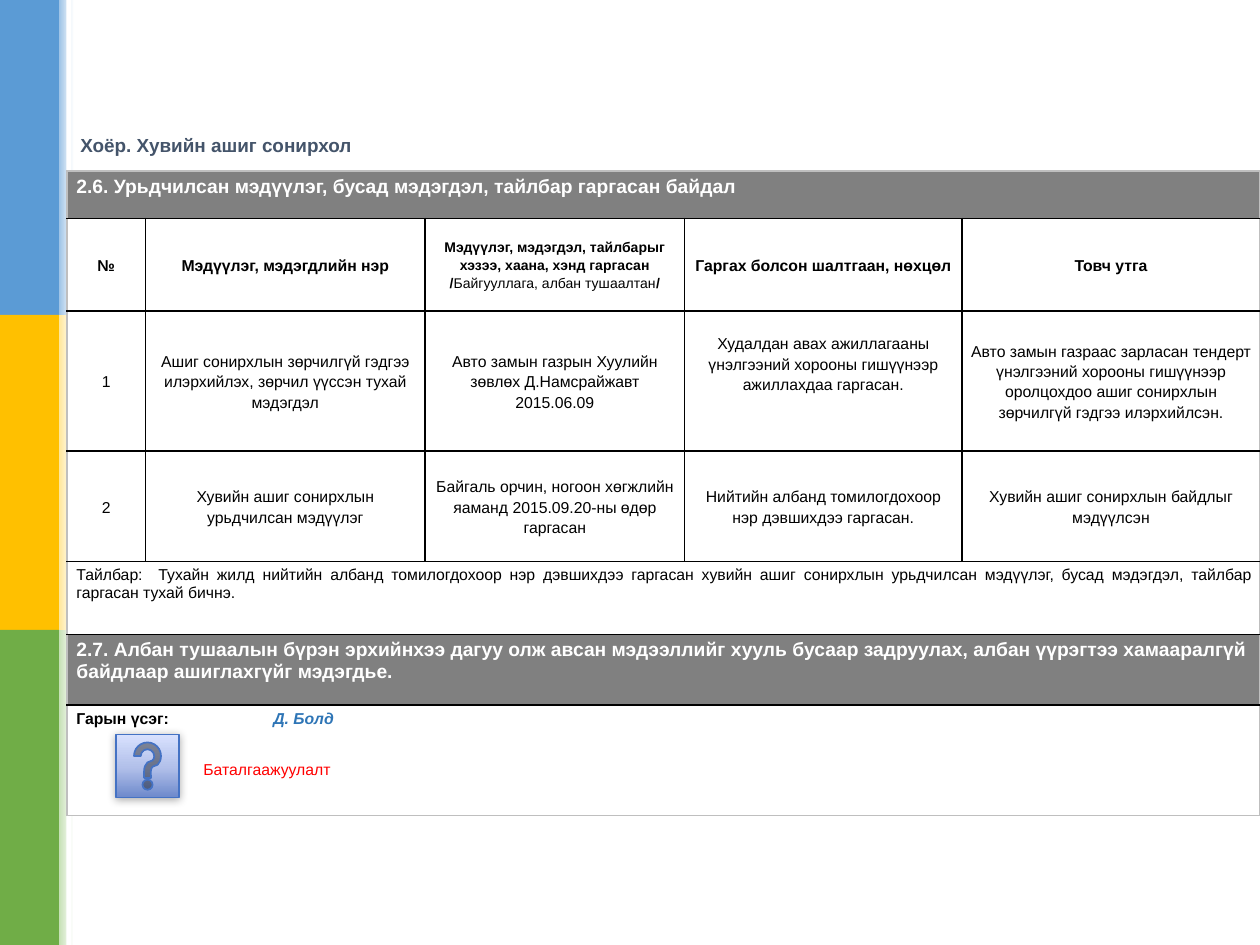
import copy

import pptx
import pptx.dml.color
import pptx.enum.shapes
import pptx.enum.text
import pptx.oxml
import pptx.oxml.ns
import pptx.util
from pptx.util import Cm

SHAPES = pptx.enum.shapes.MSO_SHAPE
ALIGN = pptx.enum.text.PP_ALIGN
ANCHOR = pptx.enum.text.MSO_ANCHOR
NAMESPACE = pptx.oxml.ns.nsdecls("a")

BANDS = [("5B9BD5", "9DC3E6"), ("FFC000", "FFE699"), ("70AD47", "C5E0B4")]
COLUMNS = [1.58, 5.64, 5.23, 5.59, 6.01]
ROWS = [0.95, 1.87, 2.82, 2.23, 1.47, 1.42, 2.23]
HEADINGS = {
    0: "2.6. Урьдчилсан мэдүүлэг, бусад мэдэгдэл, тайлбар гаргасан байдал",
    5: "2.7. Албан тушаалын бүрэн эрхийнхээ дагуу олж авсан мэдээллийг хууль бусаар "
       "задруулах, албан үүрэгтээ хамааралгүй байдлаар ашиглахгүйг мэдэгдье.",
}
NOTE = ("Тайлбар:  Тухайн жилд нийтийн албанд томилогдохоор нэр дэвшихдээ гаргасан хувийн "
        "ашиг сонирхлын урьдчилсан мэдүүлэг, бусад мэдэгдэл, тайлбар гаргасан тухай бичнэ.")
LABELS = [
    "№",
    "Мэдүүлэг, мэдэгдлийн нэр",
    "",
    "Гаргах болсон шалтгаан, нөхцөл",
    "Товч утга",
]
RECORDS = [
    [
        "1",
        "Ашиг сонирхлын зөрчилгүй гэдгээ илэрхийлэх, зөрчил үүссэн тухай мэдэгдэл",
        "Авто замын газрын Хуулийн зөвлөх Д.Намсрайжавт 2015.06.09",
        "Худалдан авах ажиллагааны үнэлгээний хорооны гишүүнээр ажиллахдаа гаргасан.",
        "Авто замын газраас зарласан тендерт үнэлгээний хорооны гишүүнээр оролцохдоо "
        "ашиг сонирхлын зөрчилгүй гэдгээ илэрхийлсэн.",
    ],
    [
        "2",
        "Хувийн ашиг сонирхлын урьдчилсан мэдүүлэг",
        "Байгаль орчин, ногоон хөгжлийн яаманд 2015.09.20-ны өдөр гаргасан",
        "Нийтийн албанд томилогдохоор нэр дэвшихдээ гаргасан.",
        "Хувийн ашиг сонирхлын байдлыг мэдүүлсэн",
    ],
]


def color(value):
    return pptx.dml.color.RGBColor.from_string(value)


def style(font, size, value="000000", bold=False):
    font.name = "Arial"
    font.size = pptx.util.Pt(size)
    font.bold = bold
    font.color.rgb = color(value)


def add_plain(page, kind, left, top, width, height):
    shape = page.shapes.add_shape(kind, Cm(left), Cm(top), Cm(width), Cm(height))
    shape.shadow.inherit = False
    shape.line.fill.background()
    return shape


def fill_solid(target, value):
    target.fill.solid()
    target.fill.fore_color.rgb = color(value)


def fill_gradient(shape, first, last, angle):
    shape.fill.gradient()
    shape.fill.gradient_angle = angle
    for stop, value, position in zip(shape.fill.gradient_stops, (first, last), (0, 1)):
        stop.color.rgb = color(value)
        stop.position = position


def add_sidebar(page, left, top, width, height):
    band_height = height / len(BANDS)
    for index, (strong, light) in enumerate(BANDS):
        band_top = top + index * band_height
        band = add_plain(page, SHAPES.RECTANGLE, left, band_top, width, band_height)
        fill_solid(band, strong)
        fade = add_plain(page, SHAPES.RECTANGLE, left + width, band_top, 0.3, band_height)
        fill_gradient(fade, light, "FFFFFF", 0)
    divider = add_plain(page, SHAPES.RECTANGLE, left + width + 0.15, top, 0.1, height)
    fill_solid(divider, "FFFFFF")


def add_title(page, left, top, width, height):
    box = page.shapes.add_textbox(Cm(left), Cm(top), Cm(width), Cm(height))
    box.text_frame.word_wrap = True
    box.text_frame.vertical_anchor = ANCHOR.MIDDLE
    para = box.text_frame.paragraphs[0]
    para.text = "Хоёр. Хувийн ашиг сонирхол"
    style(para.font, 10.8, "44546A", True)


def set_borders(cell, sides):
    properties = cell._tc.get_or_add_tcPr()
    for position, (side, value) in enumerate(sides.items()):
        properties.insert(position, pptx.oxml.parse_xml(
            f'<a:ln{side} {NAMESPACE} w="12700"><a:solidFill><a:srgbClr val="{value}"/>'
            f'</a:solidFill></a:ln{side}>'))


def set_margins(cell, side, edge):
    cell.margin_left = cell.margin_right = Cm(side)
    cell.margin_top = cell.margin_bottom = Cm(edge)


def write_cell(cell, text, size, value="000000", bold=False, align=ALIGN.LEFT):
    para = cell.text_frame.paragraphs[0]
    para.text = text
    para.alignment = align
    style(para.font, size, value, bold)
    return para


def write_grid_cell(cell, text, bold):
    set_margins(cell, 0.15, 0)
    cell.vertical_anchor = ANCHOR.MIDDLE
    para = write_cell(cell, text, 9, bold=bold, align=ALIGN.CENTER)
    para.line_spacing = 1.15
    return para


def write_filing_label(para):
    pieces = [
        ("Мэдүүлэг, мэдэгдэл, тайлбарыг хэзээ, хаана, хэнд гаргасан /", True),
        ("Байгууллага, албан тушаалтан", False),
        ("/", True),
    ]
    for text, bold in pieces:
        span = para.add_run()
        span.text = text
        style(span.font, 8, bold=bold)


def write_signature(cell):
    para = write_cell(cell, "Гарын үсэг:\t", 9, bold=True)
    para._p.get_or_add_pPr().insert(0, pptx.oxml.parse_xml(
        f'<a:tabLst {NAMESPACE}><a:tab pos="{Cm(3.97)}" algn="l"/></a:tabLst>'))
    name = para.add_run()
    name.text = "Д. Болд"
    style(name.font, 9, "2E75B6", True)
    name.font.italic = True
    seal = cell.text_frame.add_paragraph()
    seal.text = "Баталгаажуулалт"
    seal.space_before = pptx.util.Pt(19.4)
    seal._p.get_or_add_pPr().set("marL", str(Cm(2.56)))
    style(seal.font, 9, "FF0000")


def add_declaration(page, left, top):
    frame = page.shapes.add_table(len(ROWS), len(COLUMNS), Cm(left), Cm(top),
                                  Cm(sum(COLUMNS)), Cm(sum(ROWS)))
    table = frame.table
    for column, width in zip(table.columns, COLUMNS):
        column.width = Cm(width)
    for row, height in zip(table.rows, ROWS):
        row.height = Cm(height)
    last_row, last_column = len(ROWS) - 1, len(COLUMNS) - 1
    for row in range(len(ROWS)):
        full_width = row not in (1, 2, 3)
        if full_width:
            table.cell(row, 0).merge(table.cell(row, last_column))
            set_margins(table.cell(row, 0), 0.19, 0.1)
        for column in range(len(COLUMNS)):
            cell = table.cell(row, column)
            fill_solid(cell, "808080" if row in HEADINGS else "FFFFFF")
            set_borders(cell, {
                "L": "BFBFBF" if full_width or column == 0 else "000000",
                "R": "BFBFBF" if full_width or column == last_column else "000000",
                "T": "BFBFBF" if row == 0 else "000000",
                "B": "BFBFBF" if row == last_row else "000000",
            })
    for row, text in HEADINGS.items():
        write_cell(table.cell(row, 0), text, 11, "FFFFFF", True)
    for row, texts in enumerate([LABELS] + RECORDS, 1):
        for column, text in enumerate(texts):
            para = write_grid_cell(table.cell(row, column), text, row == 1)
            if not text:
                write_filing_label(para)
    reason = table.cell(2, 3)
    reason.vertical_anchor = ANCHOR.TOP
    reason.margin_top = Cm(0.44)
    write_cell(table.cell(4, 0), NOTE, 9, align=ALIGN.JUSTIFY)
    write_signature(table.cell(last_row, 0))


def add_help_button(page, left, top, side):
    button = add_plain(page, SHAPES.ACTION_BUTTON_HELP, left, top, side, side)
    fill_gradient(button, "6D89CB", "D8E1FE", 90)
    first = button._element.spPr.find(".//" + pptx.oxml.ns.qn("a:gs"))
    first.addnext(copy.deepcopy(first))
    middle = button.fill.gradient_stops[1]
    middle.color.rgb = color("B2C0EA")
    middle.position = 0.48
    button.line.color.rgb = color("4472C4")
    button.line.width = pptx.util.Pt(1)
    effects = button._element.spPr.find(pptx.oxml.ns.qn("a:effectLst"))
    effects.append(pptx.oxml.parse_xml(
        f'<a:outerShdw {NAMESPACE} blurRad="63500" dist="12700" dir="5400000">'
        '<a:srgbClr val="000000"><a:alpha val="32000"/></a:srgbClr></a:outerShdw>'))


def main():
    deck = pptx.Presentation()
    deck.slide_width, deck.slide_height = Cm(25.4), Cm(19.05)
    page = deck.slides.add_slide(deck.slide_layouts[6])
    add_sidebar(page, 0, 0, 1.19, 19.05)
    add_title(page, 1.37, 2.39, 17.48, 1.07)
    add_declaration(page, 1.35, 3.45)
    add_help_button(page, 2.34, 14.81, 1.27)
    deck.save("out.pptx")


if __name__ == "__main__":
    main()
